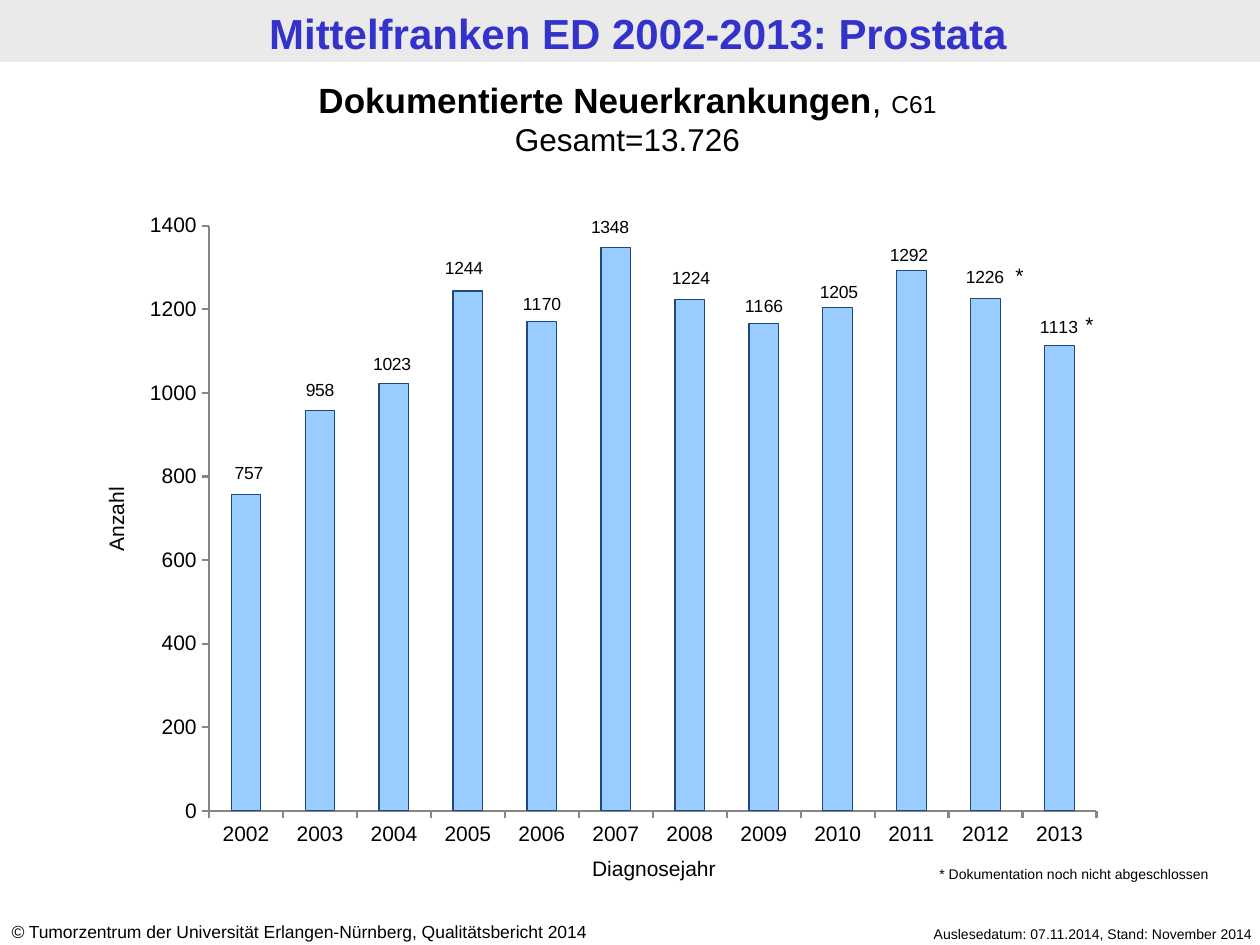
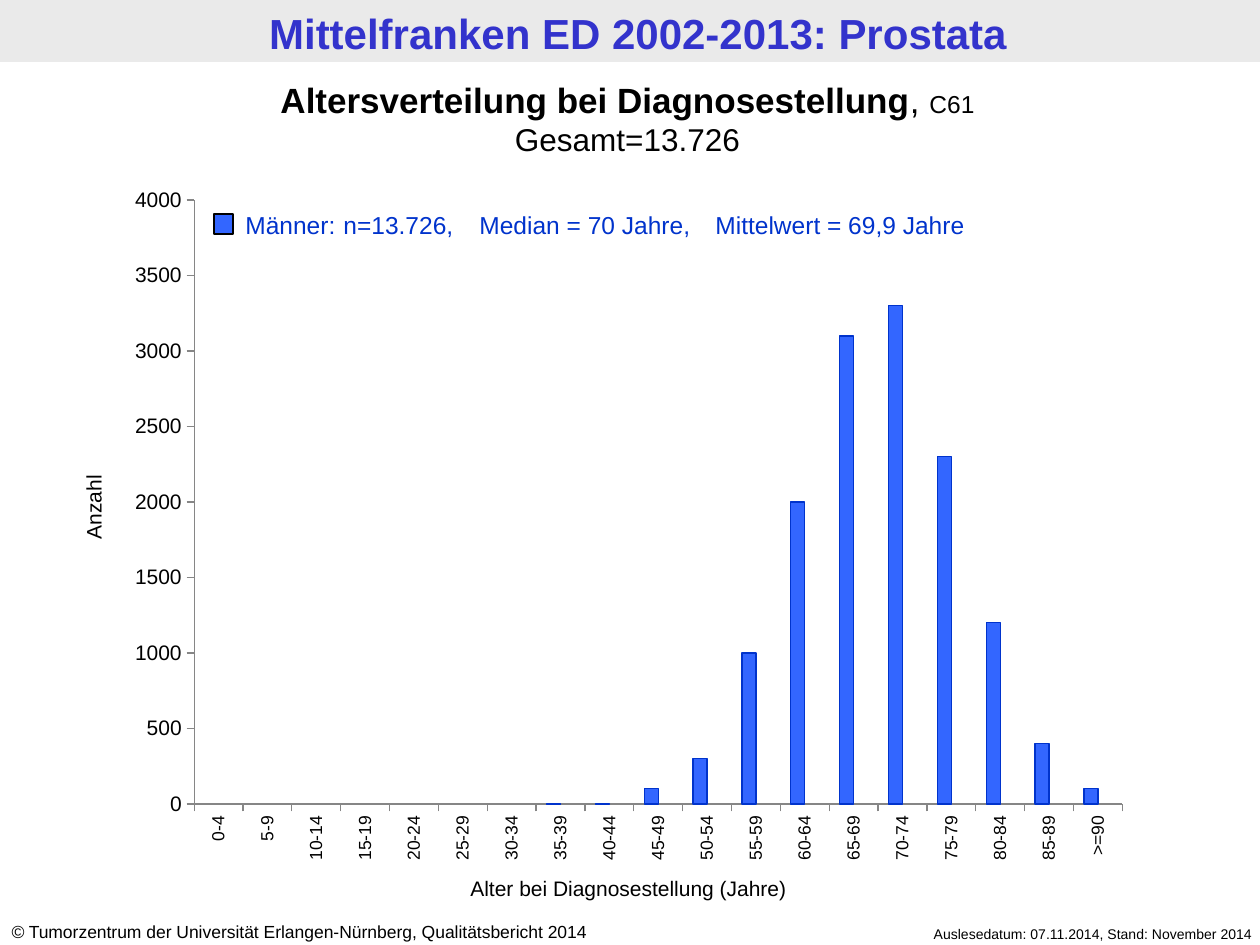
import pptx
import pptx.chart.data
import pptx.dml.color
import pptx.enum.chart
import pptx.enum.shapes
import pptx.enum.text
import pptx.oxml.ns
import pptx.util
from lxml import etree

EMU_PER_PX = 914400 / 126
FONT = "Arial"
BLACK, AXIS_GREY, BAND_GREY = "000000", "868686", "EAEAEA"
TITLE_BLUE, BAR_BLUE, DARK_BLUE = "3333CC", "3366FF", "0033CC"
ALIGN = {
    "left": pptx.enum.text.PP_ALIGN.LEFT,
    "center": pptx.enum.text.PP_ALIGN.CENTER,
    "right": pptx.enum.text.PP_ALIGN.RIGHT,
}
CHART_TYPE = pptx.enum.chart.XL_CHART_TYPE
qn = pptx.oxml.ns.qn


def px(n):
    return pptx.util.Emu(round(n * EMU_PER_PX))


def rgb(hex_color):
    return pptx.dml.color.RGBColor.from_string(hex_color)


def box(x, y, w, h):
    return px(x), px(y), px(w), px(h)


def set_tabs(p, tabs):
    tab_list = etree.SubElement(p._p.get_or_add_pPr(), qn("a:tabLst"))
    for pos in tabs:
        etree.SubElement(tab_list, qn("a:tab"), pos=str(px(pos)), algn="l")


def write(sp, text, size=12, color=BLACK, bold=False, align="left", tabs=()):
    """Fill a shape; text is a string or a list of paragraphs of (text, format) runs."""
    tf = sp.text_frame
    tf.word_wrap = True
    tf.auto_size = pptx.enum.text.MSO_AUTO_SIZE.NONE
    tf.vertical_anchor = pptx.enum.text.MSO_ANCHOR.TOP
    paragraphs = [[(text, {})]] if isinstance(text, str) else text
    for i, runs in enumerate(paragraphs):
        p = tf.add_paragraph() if i else tf.paragraphs[0]
        p.alignment = ALIGN[align]
        if tabs:
            set_tabs(p, tabs)
        for content, fmt in runs:
            r = p.add_run()
            r.text = content
            r.font.name = FONT
            r.font.size = pptx.util.Pt(fmt.get("size", size))
            r.font.bold = fmt.get("bold", bold)
            r.font.italic = fmt.get("italic", False)
            r.font.color.rgb = rgb(color)


def add_text(s, x, y, w, h, text, rotation=0, **fmt):
    sp = s.shapes.add_textbox(*box(x, y, w, h))
    sp.rotation = rotation
    write(sp, text, **fmt)


def add_rect(s, x, y, w, h, fill, line=None):
    sp = s.shapes.add_shape(pptx.enum.shapes.MSO_SHAPE.RECTANGLE, *box(x, y, w, h))
    sp.shadow.inherit = False
    sp.fill.solid()
    sp.fill.fore_color.rgb = rgb(fill)
    if line:
        sp.line.color.rgb = rgb(line)
        sp.line.width = pptx.util.Pt(0.75)
    else:
        sp.line.fill.background()


def add_slide(prs, heading):
    """Add a slide with the shared band and footers and its own heading."""
    s = prs.slides.add_slide(prs.slide_layouts[5])
    add_rect(s, 0, 0, 1260, 62, BAND_GREY)
    add_text(s, 8, 1, 1260, 62, "Mittelfranken ED 2002-2013: Prostata",
             size=24, color=TITLE_BLUE, bold=True, align="center")
    add_text(s, 838, 919, 427, 30, "Auslesedatum: 07.11.2014, Stand: November 2014",
             size=8, align="right")
    add_text(s, -1, 915, 660, 34, [[
        ("©", {"italic": True}),
        (" Tumorzentrum der Universität Erlangen-Nürnberg, Qualitätsbericht 2014", {}),
    ]], size=10)
    title = s.shapes.title
    title.left, title.top, title.width, title.height = box(-5, 72, 1265, 93)
    write(title, [
        [(heading, {"bold": True}), (", ", {}), ("C61", {"size": 14})],
        [("Gesamt=13.726", {"size": 18})],
    ], size=20, align="center")
    return s


def add_layout(parent, index, **values):
    layout = etree.Element(qn("c:layout"))
    manual = etree.SubElement(layout, qn("c:manualLayout"))
    for name, value in values.items():
        etree.SubElement(manual, qn(f"c:{name}"), val=str(value))
    parent.insert(index, layout)


def place_plot(chart, x, y, w, h):
    """Fix the inner plot area, in fractions of the chart."""
    area = chart.element.xpath("c:chart/c:plotArea")[0]
    for old in area.xpath("c:layout"):
        area.remove(old)
    add_layout(area, 0, layoutTarget="inner", xMode="edge", yMode="edge",
               x=x, y=y, w=w, h=h)


def format_axis(axis, size, line_width):
    axis.has_major_gridlines = False
    axis.major_tick_mark = pptx.enum.chart.XL_TICK_MARK.OUTSIDE
    axis.minor_tick_mark = pptx.enum.chart.XL_TICK_MARK.NONE
    axis.format.line.color.rgb = rgb(AXIS_GREY)
    axis.format.line.width = pptx.util.Pt(line_width)
    font = axis.tick_labels.font
    font.name, font.size = FONT, pptx.util.Pt(size)
    font.color.rgb = rgb(BLACK)


def add_columns(s, frame, kind, categories, series, plot_area, top, step,
                category_size=12, line_width=0.75):
    """Add a column chart; series holds (values, fill, line) tuples."""
    data = pptx.chart.data.CategoryChartData()
    data.categories = categories
    for n, (values, _, _) in enumerate(series, 1):
        data.add_series(f"Series {n}", values)
    chart = s.shapes.add_chart(kind, *box(*frame), data).chart
    chart.has_legend = chart.has_title = False
    chart.font.name, chart.font.size = FONT, pptx.util.Pt(12)
    chart.font.color.rgb = rgb(BLACK)
    format_axis(chart.category_axis, category_size, line_width)
    format_axis(chart.value_axis, 12, line_width)
    chart.value_axis.minimum_scale = 0
    chart.value_axis.maximum_scale = top
    chart.value_axis.major_unit = step
    plot = chart.plots[0]
    plot.vary_by_categories = False
    plot.gap_width = 150
    for ser, (_, fill, line) in zip(plot.series, series):
        ser.format.fill.solid()
        ser.format.fill.fore_color.rgb = rgb(fill)
        ser.format.line.color.rgb = rgb(line)
        ser.format.line.width = pptx.util.Pt(0.75)
    place_plot(chart, *plot_area)
    return chart


def place_value_labels(chart, frame, plot_area, values, top, centers):
    """Move each value label from the middle of its bar to its centre in px."""
    left, upper, width, height = frame
    plot_x, plot_y, plot_w, plot_h = plot_area
    series = chart.plots[0].series[0]
    for i in range(len(values)):
        label = series.points[i].data_label
        label.position = pptx.enum.chart.XL_LABEL_POSITION.CENTER
        label.font.name, label.font.size = FONT, pptx.util.Pt(10)
        label.font.color.rgb = rgb(BLACK)
    for leader in chart.element.xpath("//c:showLeaderLines"):
        leader.set("val", "0")
    labels = chart.element.xpath("//c:dLbl")
    for i, (dlbl, value, (x, y)) in enumerate(zip(labels, values, centers)):
        bar_x = plot_x + plot_w * (i + 0.5) / len(values)
        bar_y = plot_y + plot_h * (1 - value / top / 2)
        add_layout(dlbl, 1, x=round((x - left) / width - bar_x, 4),
                   y=round((y - upper) / height - bar_y, 4))


def add_new_cases(prs):
    s = add_slide(prs, "Dokumentierte Neuerkrankungen")
    frame = (145, 207, 971, 648)
    plot_area = (0.066, 0.029, 0.914, 0.903)
    cases = [757, 958, 1023, 1244, 1170, 1348, 1224, 1166, 1205, 1292, 1226, 1113]
    centers = [(249, 474), (320, 391), (392, 365), (464, 269), (542, 305), (610, 228),
               (691, 279), (764, 307), (839, 293), (909, 256), (985, 278), (1059, 328)]
    chart = add_columns(s, frame, CHART_TYPE.COLUMN_STACKED,
                        [str(year) for year in range(2002, 2014)],
                        [(cases, "99CCFF", "1F497D")], plot_area, 1400, 200,
                        line_width=1.25)
    chart.plots[0].overlap = 100
    place_value_labels(chart, frame, plot_area, cases, 1400, centers)
    add_text(s, 512, 849, 284, 38, "Diagnosejahr", align="center")
    add_text(s, 39, 500, 154, 38, "Anzahl", rotation=270, align="center")
    for x, y in [(987, 256), (1057, 305)]:
        add_text(s, x, y, 49, 38, "*", align="right")
    add_text(s, 927, 859, 312, 30, "* Dokumentation noch nicht abgeschlossen", size=8)


def add_age_distribution(prs):
    s = add_slide(prs, "Altersverteilung bei Diagnosestellung")
    ages = [f"{age}-{age + 4}" for age in range(0, 90, 5)] + [">=90"]
    men = [None] * 7 + [0, 0, 100, 300, 1000, 2000, 3100, 3300, 2300, 1200, 400, 100]
    chart = add_columns(s, (115, 175, 1028, 699), CHART_TYPE.COLUMN_CLUSTERED, ages,
                        [(men, BAR_BLUE, DARK_BLUE),
                         ([None] * len(ages), "FF0000", "632523")],
                        (0.077, 0.036, 0.903, 0.864), 4000, 500, category_size=10)
    chart.plots[0].overlap = 0
    body = chart.category_axis._element.xpath("c:txPr/a:bodyPr")[0]
    body.set("rot", "-5400000")
    body.set("vert", "horz")
    add_text(s, 233, 204, 863, 43,
             "Männer:\tn=13.726,\tMedian = 70 Jahre,\tMittelwert = 69,9 Jahre",
             size=14, color=DARK_BLUE, tabs=(98, 234, 470))
    add_text(s, 435, 869, 387, 38, "Alter bei Diagnosestellung (Jahre)", align="center")
    add_rect(s, 214, 214, 19, 20, BAR_BLUE, line=BLACK)
    add_text(s, -71, 488, 329, 38, "Anzahl", rotation=270, align="center")


def main():
    prs = pptx.Presentation()
    prs.slide_width, prs.slide_height = px(1260), px(945)
    add_new_cases(prs)
    add_age_distribution(prs)
    prs.save("out.pptx")


if __name__ == "__main__":
    main()
